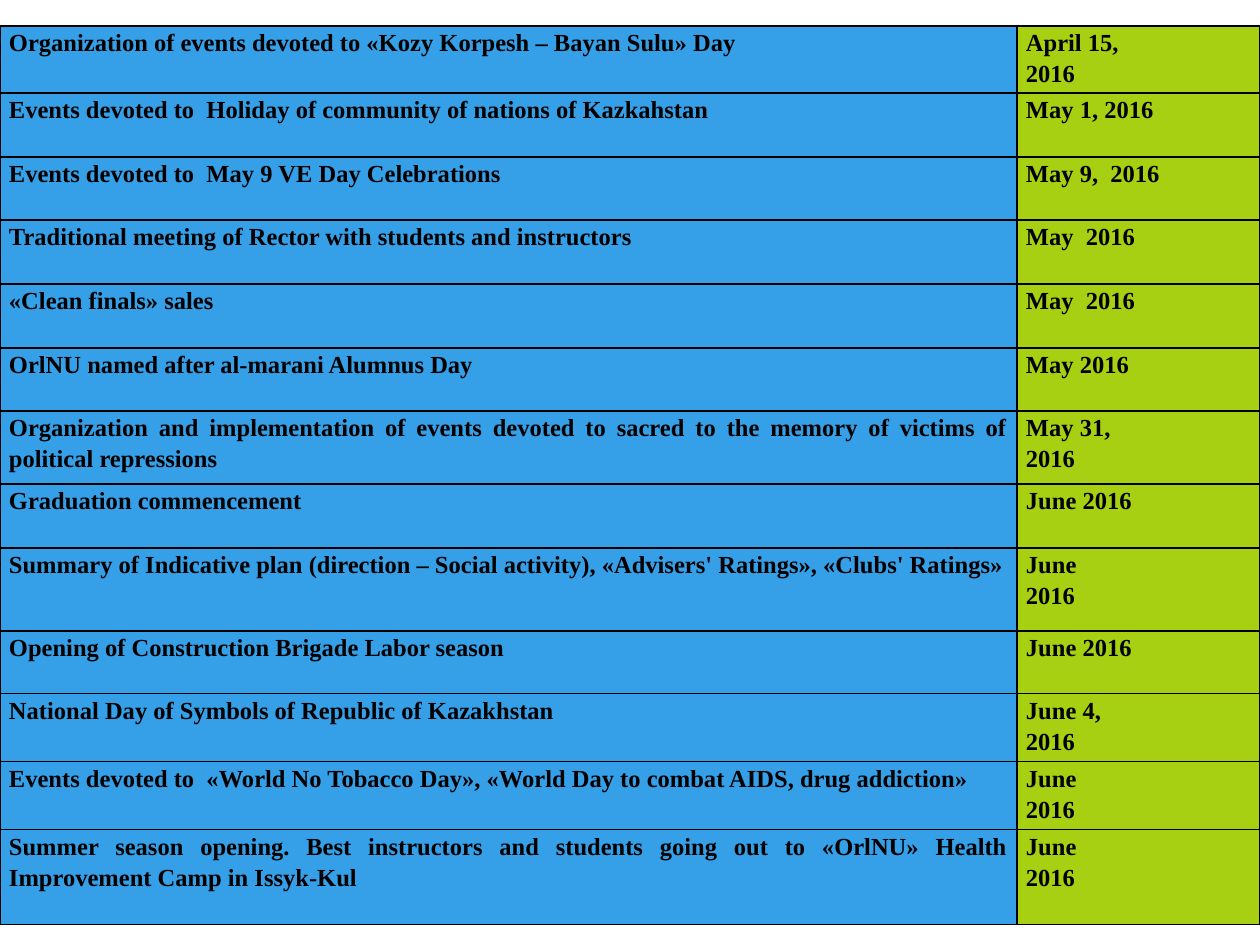
from lxml import etree
from pptx import Presentation
from pptx import util as u
from pptx.dml.color import RGBColor
from pptx.enum import text
from pptx.oxml import ns

PX = 914400 // 126
BLUE = RGBColor(0x35, 0x9F, 0xE7)
GREEN = RGBColor(0xA7, 0xD0, 0x12)
BLACK = RGBColor(0, 0, 0)
FONT = "Times New Roman"
COLS = (1017, 243)

# Row height in px, event, date (one line per paragraph)
EVENTS = [
    (67, "Organization of events devoted to «Kozy Korpesh – Bayan Sulu» Day", "April 15,\n2016"),
    (64, "Events devoted to  Holiday of community of nations of Kazkahstan", "May 1, 2016"),
    (63, "Events devoted to  May 9 VE Day Celebrations", "May 9,  2016"),
    (64, "Traditional meeting of Rector with students and instructors", "May  2016"),
    (64, "«Clean finals» sales", "May  2016"),
    (63, "OrlNU named after al-marani Alumnus Day", "May 2016"),
    (73, "Organization and implementation of events devoted to sacred to the memory "
         "of victims of political repressions", "May 31,\n2016"),
    (64, "Graduation commencement", "June 2016"),
    (83, "Summary of Indicative plan (direction – Social activity), "
         "«Advisers' Ratings», «Clubs' Ratings»", "June\n2016"),
    (63, "Opening of Construction Brigade Labor season", "June 2016"),
    (68, "National Day of Symbols of Republic of Kazakhstan", "June 4,\n2016"),
    (68, "Events devoted to  «World No Tobacco Day», "
         "«World Day to combat AIDS, drug addiction»", "June\n2016"),
    (95, "Summer season opening. Best instructors and students going out to "
         "«OrlNU» Health Improvement Camp in Issyk-Kul", "June\n2016"),
]


def border(cell):
    props = cell._tc.get_or_add_tcPr()
    for i, side in enumerate("LRTB"):
        line = etree.Element(ns.qn(f"a:ln{side}"), w=str(u.Pt(1)))
        fill = etree.SubElement(line, ns.qn("a:solidFill"))
        etree.SubElement(fill, ns.qn("a:srgbClr"), val=str(BLACK))
        props.insert(i, line)


def write(cell, words, color, align):
    cell.text = words
    cell.margin_left = cell.margin_right = 9 * PX
    cell.margin_top = cell.margin_bottom = 0
    cell.fill.solid()
    cell.fill.fore_color.rgb = color
    border(cell)
    for para in cell.text_frame.paragraphs:
        para.alignment = align
        para.line_spacing = 1.15
        para.font.name = FONT
        para.font.size = u.Pt(14)
        para.font.bold = True
        para.font.color.rgb = BLACK


def plan(slide, left, top, width, height):
    """Place the table of events and dates."""
    frame = slide.shapes.add_table(
        len(EVENTS), len(COLS), left * PX, top * PX, width * PX, height * PX)
    table = frame.table
    table.first_row = table.horz_banding = False
    for col, wide in zip(table.columns, COLS):
        col.width = wide * PX
    for row, (high, event, date) in zip(table.rows, EVENTS):
        row.height = high * PX
        write(row.cells[0], event, BLUE, text.PP_ALIGN.JUSTIFY)
        write(row.cells[1], date, GREEN, text.PP_ALIGN.LEFT)


def main():
    deck = Presentation()
    deck.slide_width, deck.slide_height = 1260 * PX, 945 * PX
    slide = deck.slides.add_slide(deck.slide_layouts[6])
    plan(slide, 0, 26, sum(COLS), sum(row[0] for row in EVENTS))
    deck.save("out.pptx")


if __name__ == "__main__":
    main()
